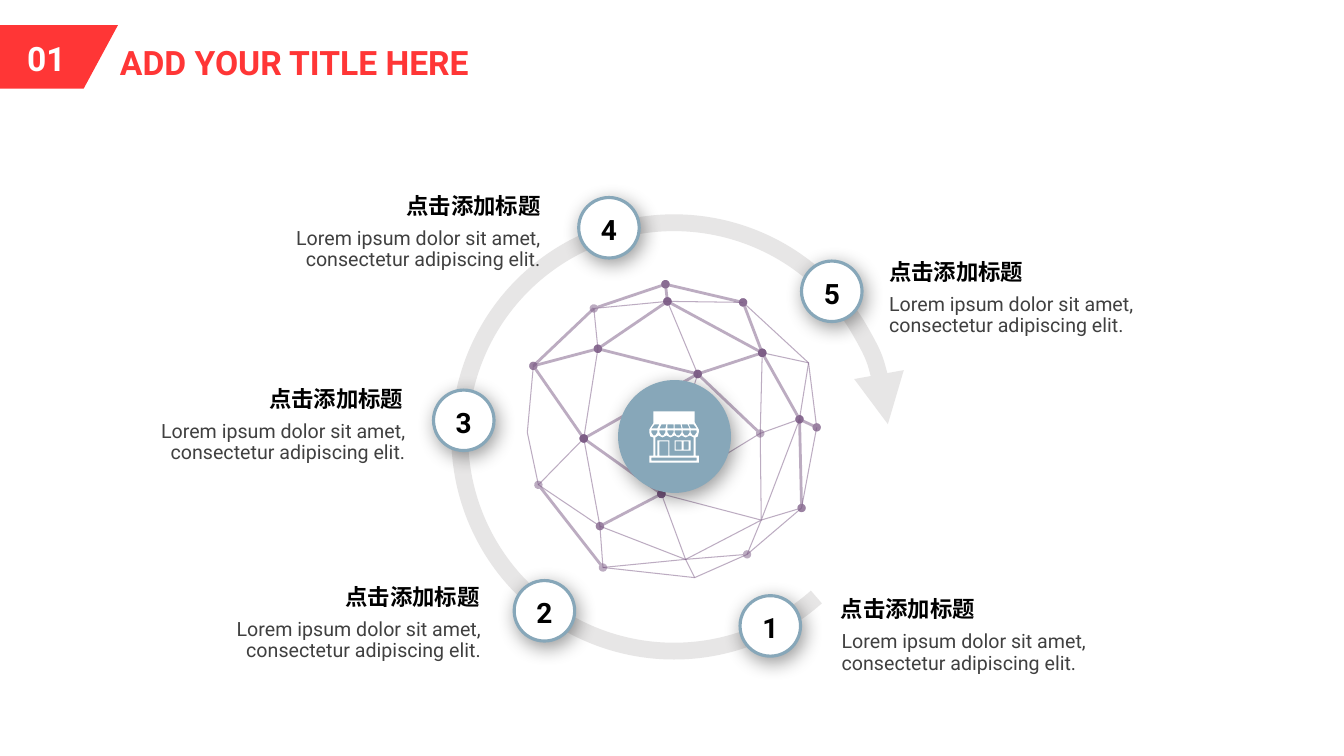
import pptx
import pptx.util
import pptx.dml.color
import pptx.enum.shapes
import pptx.enum.text
import pptx.oxml
import pptx.oxml.ns
from lxml import etree

PX = 9144  # one px is a hundredth of an inch
SHAPE = pptx.enum.shapes.MSO_SHAPE
ALIGN = pptx.enum.text.PP_ALIGN
THEME = {
    "font": "Roboto",
    "red": "FF3636", "blue": "87A7B9", "violet": "7B5A85", "ring": "E7E6E6",
    "white": "FFFFFF", "black": "000000", "grey": "404040",
    "title": 24, "number": 20, "heading": 16, "body": 14,
}


def draw(s, fill=None, line=None, width=0, alpha=100, head=None, tail=None, shadow=False):
    """Set fill, line, line ends and shadow of a shape or connector."""
    if fill:
        s.fill.solid()
        s.fill.fore_color.rgb = pptx.dml.color.RGBColor.from_string(THEME[fill])
    elif hasattr(s, "fill"):
        s.fill.background()
    if line:
        s.line.color.rgb = pptx.dml.color.RGBColor.from_string(THEME[line])
        s.line.width = pptx.util.Pt(width)
        ln = s.element.spPr.find(pptx.oxml.ns.qn("a:ln"))
        if alpha < 100:
            color = ln.find(".//" + pptx.oxml.ns.qn("a:srgbClr"))
            etree.SubElement(color, pptx.oxml.ns.qn("a:alpha"), val=str(alpha * 1000))
        for tag, end in (("a:headEnd", head), ("a:tailEnd", tail)):
            if end:
                etree.SubElement(ln, pptx.oxml.ns.qn(tag), type=end)
    else:
        s.line.fill.background()
    effects = etree.SubElement(s.element.spPr, pptx.oxml.ns.qn("a:effectLst"))
    if shadow:
        outer = etree.SubElement(effects, pptx.oxml.ns.qn("a:outerShdw"), blurRad="177800",
                                 dist="50800", dir="3600000", algn="ctr", rotWithShape="0")
        color = etree.SubElement(outer, pptx.oxml.ns.qn("a:srgbClr"), val=THEME["black"])
        etree.SubElement(color, pptx.oxml.ns.qn("a:alpha"), val="40000")


def write(s, text, size, color, bold=True, align=ALIGN.LEFT, wrap=True, spacing=1.0):
    """Put one formatted paragraph into a text shape."""
    tf = s.text_frame
    frame = {"word_wrap": wrap, "vertical_anchor": pptx.enum.text.MSO_ANCHOR.TOP,
             "auto_size": pptx.enum.text.MSO_AUTO_SIZE.SHAPE_TO_FIT_TEXT}
    for name, value in frame.items():
        setattr(tf, name, value)
    p = tf.paragraphs[0]
    p.alignment, p.line_spacing = align, spacing
    r = p.add_run()
    r.text = text
    font = {"name": THEME["font"], "size": pptx.util.Pt(THEME[size]), "bold": bold}
    for name, value in font.items():
        setattr(r.font, name, value)
    r.font.color.rgb = pptx.dml.color.RGBColor.from_string(THEME[color])


prs = pptx.Presentation()
prs.slide_width, prs.slide_height = 1333 * PX, 750 * PX
slide = prs.slides.add_slide(prs.slide_layouts[5])
shapes = slide.shapes

# Network globe: nodes, then chains of nodes with a dot at the (h)ead or (t)ail
nodes = {
    "A": (660, 282), "B": (737, 300), "C": (810, 424), "D": (802, 360), "E": (598, 563),
    "F": (689, 573), "G": (741, 550), "H": (795, 504), "I": (534, 481), "J": (529, 363),
    "K": (523, 429), "L": (589, 306), "M": (662, 299), "N": (579, 435), "O": (595, 522),
    "P": (593, 346), "Q": (656, 490), "R": (680, 555), "S": (692, 371), "T": (793, 416),
    "U": (756, 350), "V": (755, 516), "W": (754, 430),
}
chains = {
    "ht": "BA CDB IE AL MSQ AM CT UB TU QVH NQ JN PJ MP UM SU NS OIN QO TWQ SW PS",
    "h": "QRF HT UWVT GRE",
    "t": "LPN",
    "": "EFGHC JKI LMB NOE LJ TDU ORVG",
}
for dots, names in chains.items():
    for chain in names.split():
        points = [nodes[n] for n in chain]
        if len(points) == 2:
            s = shapes.add_connector(pptx.enum.shapes.MSO_CONNECTOR.STRAIGHT,
                                     *(v * PX for point in points for v in point))
        else:
            builder = shapes.build_freeform(*points[0], scale=PX)
            builder.add_line_segments(points[1:], close=False)
            s = builder.convert_to_shape()
        draw(s, line="violet", alpha=50, head="oval" if "h" in dots else None,
             tail="oval" if "t" in dots else None)

# Ring with arrowhead
s = shapes.add_shape(SHAPE.ARC, 456 * PX, 221 * PX, 425 * PX, 425 * PX)
s.adjustments[0], s.adjustments[1] = 29.012, 213.95
draw(s, line="ring", width=12, tail="triangle")

# Centre disc
s = shapes.add_shape(SHAPE.OVAL, 613 * PX, 377 * PX, 112 * PX, 112 * PX)
draw(s, fill="blue", shadow=True)

# Shop icon: outline, wall, then rectangles and awning stripes cut out in turn
shop = [
    [(648, 408), (689, 408), (689, 419), (693, 426), (693, 429), (692, 433), (690, 434),
     (690, 452), (693, 452), (693, 459), (644, 459), (644, 452), (648, 452), (648, 434),
     (645, 433), (644, 429), (644, 426), (648, 420)],
    [(664, 452), (664, 437), (652, 437), (652, 452), (650, 452), (650, 434), (653, 432),
     (657, 434), (661, 432), (665, 434), (669, 432), (673, 434), (676, 432), (680, 434),
     (684, 432), (688, 434), (688, 452)],
]
for l, t, r, b in ((646, 454, 691, 457), (654, 438, 663, 452), (669, 437, 685, 447),
                   (670, 438, 676, 446), (678, 438, 683, 446)):
    shop.append([(l, t), (r, t), (r, b), (l, b)])
for top_l, top_r, l, r in ((649, 654, 646, 652), (656, 661, 654, 660), (662, 668, 662, 668),
                           (669, 675, 669, 676), (676, 682, 677, 684), (683, 688, 685, 691)):
    shop.append([(top_l, 421), (top_r, 421), (r, 425), (l, 425)])
    shop.append([(l, 427), (r, 427), (r, 429), (r - 2, 432), (l + 2, 432), (l, 429)])
builder = shapes.build_freeform(*shop[0][0], scale=PX)
for contour in shop:
    builder.move_to(*contour[0])
    builder.add_line_segments(contour[1:], close=True)
draw(builder.convert_to_shape(), fill="white")

# Steps: number, disc left and top, heading left and top, body left and width, alignments
steps = [
    ("3", 430, 387, 257, 377, 130, 282, ALIGN.LEFT, ALIGN.RIGHT),
    ("1", 734, 591, 824, 586, 825, 283, ALIGN.LEFT, ALIGN.LEFT),
    ("2", 510, 576, 333, 574, 204, 283, ALIGN.LEFT, ALIGN.RIGHT),
    ("4", 574, 196, 391, 186, 257, 289, ALIGN.RIGHT, ALIGN.RIGHT),
    ("5", 795, 259, 872, 251, 872, 286, ALIGN.LEFT, ALIGN.LEFT),
]
for number, x, y, head_x, head_y, body_x, body_w, head_align, body_align in steps:
    s = shapes.add_shape(SHAPE.OVAL, x * PX, y * PX, 60 * PX, 60 * PX)
    draw(s, fill="white", line="blue", width=2.25, shadow=True)
    s = shapes.add_textbox((x - 29) * PX, (y + 10) * PX, 118 * PX, 44 * PX)
    write(s, number, "number", "black", align=ALIGN.CENTER)
    s = shapes.add_textbox(body_x * PX, (head_y + 36) * PX, body_w * PX, 53 * PX)
    write(s, "Lorem ipsum dolor sit amet, consectetur adipiscing elit.", "body", "grey",
          bold=False, align=body_align, spacing=0.9)
    s = shapes.add_textbox(head_x * PX, head_y * PX, 155 * PX, 37 * PX)
    write(s, "点击添加标题", "heading", "black", align=head_align, wrap=False)

# Section tag and title
builder = shapes.build_freeform(0, 25, scale=PX)
builder.add_line_segments([(117, 25), (83, 88), (0, 88)], close=True)
draw(builder.convert_to_shape(), fill="red")
s = shapes.title
s.left, s.top, s.width, s.height = 109 * PX, 37 * PX, 414 * PX, 50 * PX
write(s, "ADD YOUR TITLE HERE", "title", "red")
s = shapes.add_textbox(17 * PX, 33 * PX, 63 * PX, 50 * PX)
write(s, "01", "title", "white")

prs.save("out.pptx")
